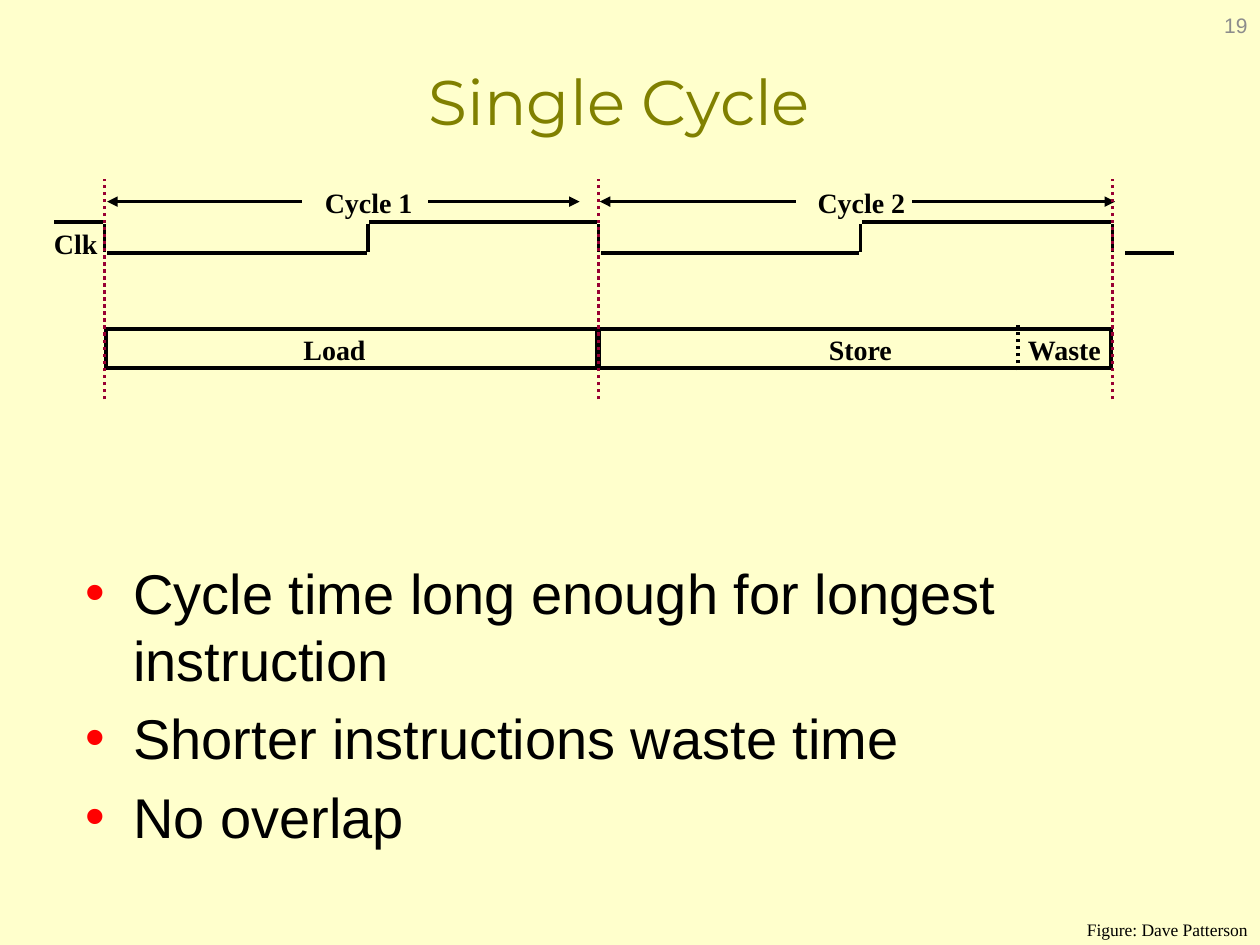
from pptx import Presentation
from pptx.dml.color import RGBColor
from pptx.enum.dml import MSO_LINE
from pptx.enum.shapes import MSO_CONNECTOR, MSO_SHAPE
from pptx.enum.text import MSO_ANCHOR, MSO_AUTO_SIZE, PP_ALIGN
from pptx.util import Inches, Pt
from lxml.etree import SubElement
from pptx.oxml.ns import qn

CREAM = RGBColor(0xFF, 0xFF, 0xCC)
OLIVE = RGBColor(0x80, 0x80, 0x00)
BLACK = RGBColor(0x00, 0x00, 0x00)
MAROON = RGBColor(0x99, 0x00, 0x33)
GRAY = RGBColor(0x8C, 0x8C, 0x8C)
RED = RGBColor(0xFF, 0x00, 0x00)
SERIF = "Times New Roman"

# Clock levels and, for each cycle, its start, rising edge and end
HIGH, LOW = 1.76, 2.01
EDGE_TOP, EDGE_BOTTOM = 1.78, 2.0
CYCLES = [(0.83, 2.92, 4.75), (4.75, 6.83, 8.83)]
GAP = 0.01
ARROW_Y = 1.6
BAR_TOP, BAR_HEIGHT = 2.61, 0.31


def add_span(para, text, size, font, color, bold=False):
    span = para.add_run()
    span.text = text
    span.font.size = Pt(size)
    span.font.name = font
    span.font.bold = bold
    span.font.color.rgb = color


def add_box(page, left, top, width, height, wrap=True):
    box = page.shapes.add_textbox(Inches(left), Inches(top),
                                  Inches(width), Inches(height))
    box.text_frame.word_wrap = wrap
    if not wrap:
        box.text_frame.auto_size = MSO_AUTO_SIZE.SHAPE_TO_FIT_TEXT
    return box.text_frame


def add_label(page, text, left, top, width):
    frame = add_box(page, left, top, width, 0.36, wrap=False)
    add_span(frame.paragraphs[0], text, 16, SERIF, BLACK, bold=True)


def add_line(page, x1, y1, x2, y2, color=BLACK, dotted=False, arrow=False):
    line = page.shapes.add_connector(MSO_CONNECTOR.STRAIGHT, Inches(x1),
                                     Inches(y1), Inches(x2), Inches(y2))
    line.line.color.rgb = color
    line.line.width = Pt(2)
    properties = line._element.spPr
    if dotted:
        line.line.dash_style = MSO_LINE.ROUND_DOT
    if arrow:
        SubElement(properties.find(qn("a:ln")), qn("a:headEnd"), type="triangle")
    SubElement(properties, qn("a:effectLst"))


def add_bar(page, left, right):
    bar = page.shapes.add_shape(MSO_SHAPE.RECTANGLE, Inches(left), Inches(BAR_TOP),
                                Inches(right - left), Inches(BAR_HEIGHT))
    bar.shadow.inherit = False
    bar.fill.background()
    bar.line.color.rgb = BLACK
    bar.line.width = Pt(2)


def add_bullet(para, text):
    para.space_before = Pt(6.4)
    properties = para._p.get_or_add_pPr()
    properties.set("marL", str(Inches(0.38)))
    properties.set("indent", str(-Inches(0.38)))
    color = SubElement(properties, qn("a:buClr"))
    SubElement(color, qn("a:srgbClr"), val=str(RED))
    SubElement(properties, qn("a:buFont"), typeface="Arial")
    SubElement(properties, qn("a:buChar"), char="•")
    add_span(para, text, 32, "Arial", BLACK)


def add_title(page, text):
    title = page.shapes.title
    title.left, title.top = Inches(0.58), Inches(0.17)
    title.width, title.height = Inches(8.67), Inches(1.25)
    title.text_frame.vertical_anchor = MSO_ANCHOR.MIDDLE
    para = title.text_frame.paragraphs[0]
    para.alignment = PP_ALIGN.CENTER
    add_span(para, text, 36, "Montserrat", OLIVE)


def add_clock(page):
    add_line(page, 0.43, HIGH, 0.82, HIGH)
    for start, rise, end in CYCLES:
        add_line(page, start, EDGE_TOP, start, EDGE_BOTTOM)
        add_line(page, start + 2 * GAP, LOW, rise - GAP, LOW)
        add_line(page, rise, EDGE_TOP, rise, EDGE_BOTTOM)
        add_line(page, rise + GAP, HIGH, end - GAP, HIGH)
    last = CYCLES[-1][-1]
    add_line(page, last, EDGE_TOP, last, EDGE_BOTTOM)
    add_line(page, 8.93, LOW, 9.32, LOW)
    add_label(page, "Clk", 0.33, 1.75, 0.6)


def add_cycle_spans(page):
    add_label(page, "Cycle 1", 2.48, 1.42, 0.92)
    add_label(page, "Cycle 2", 6.39, 1.42, 0.92)
    for tip, tail in [(0.85, 2.4), (4.6, 3.4), (4.76, 6.32), (8.85, 7.24)]:
        add_line(page, tip, ARROW_Y, tail, ARROW_Y, arrow=True)


def add_instructions(page):
    for start, _, end in CYCLES:
        add_bar(page, start + GAP, end - GAP)
    for text, left, width in [("Load", 2.31, 0.72), ("Store", 6.48, 0.73),
                              ("Waste", 8.06, 0.82)]:
        add_label(page, text, left, 2.59, width)
    add_line(page, 8.08, 2.94, 8.08, 2.58, dotted=True)


def main():
    deck = Presentation()
    deck.slide_width, deck.slide_height = Inches(10), Inches(7.5)
    page = deck.slides.add_slide(deck.slide_layouts[5])
    page.background.fill.solid()
    page.background.fill.fore_color.rgb = CREAM
    add_title(page, "Single Cycle")

    # Timing diagram
    add_clock(page)
    add_instructions(page)
    add_cycle_spans(page)
    for x in (0.83, 4.75, 8.83):
        add_line(page, x, 3.17, x, 1.42, MAROON, dotted=True)

    # Key points
    body = add_box(page, 0.58, 4.38, 8.67, 2.79)
    points = ["Cycle time long enough for longest instruction",
              "Shorter instructions waste time", "No overlap"]
    for index, point in enumerate(points):
        add_bullet(body.add_paragraph() if index else body.paragraphs[0], point)

    # Figure credit and page number
    credit = add_box(page, 8.52, 7.33, 1.48, 0.17, wrap=False).paragraphs[0]
    credit.alignment = PP_ALIGN.RIGHT
    credit.line_spacing = 0.4
    add_span(credit, "Figure: Dave Patterson", 10, SERIF, BLACK)
    number = add_box(page, 7.67, 0, 2.33, 0.4)
    number.vertical_anchor = MSO_ANCHOR.MIDDLE
    number.paragraphs[0].alignment = PP_ALIGN.RIGHT
    add_span(number.paragraphs[0], "19", 12, "Arial", GRAY)

    deck.save("out.pptx")


if __name__ == "__main__":
    main()
